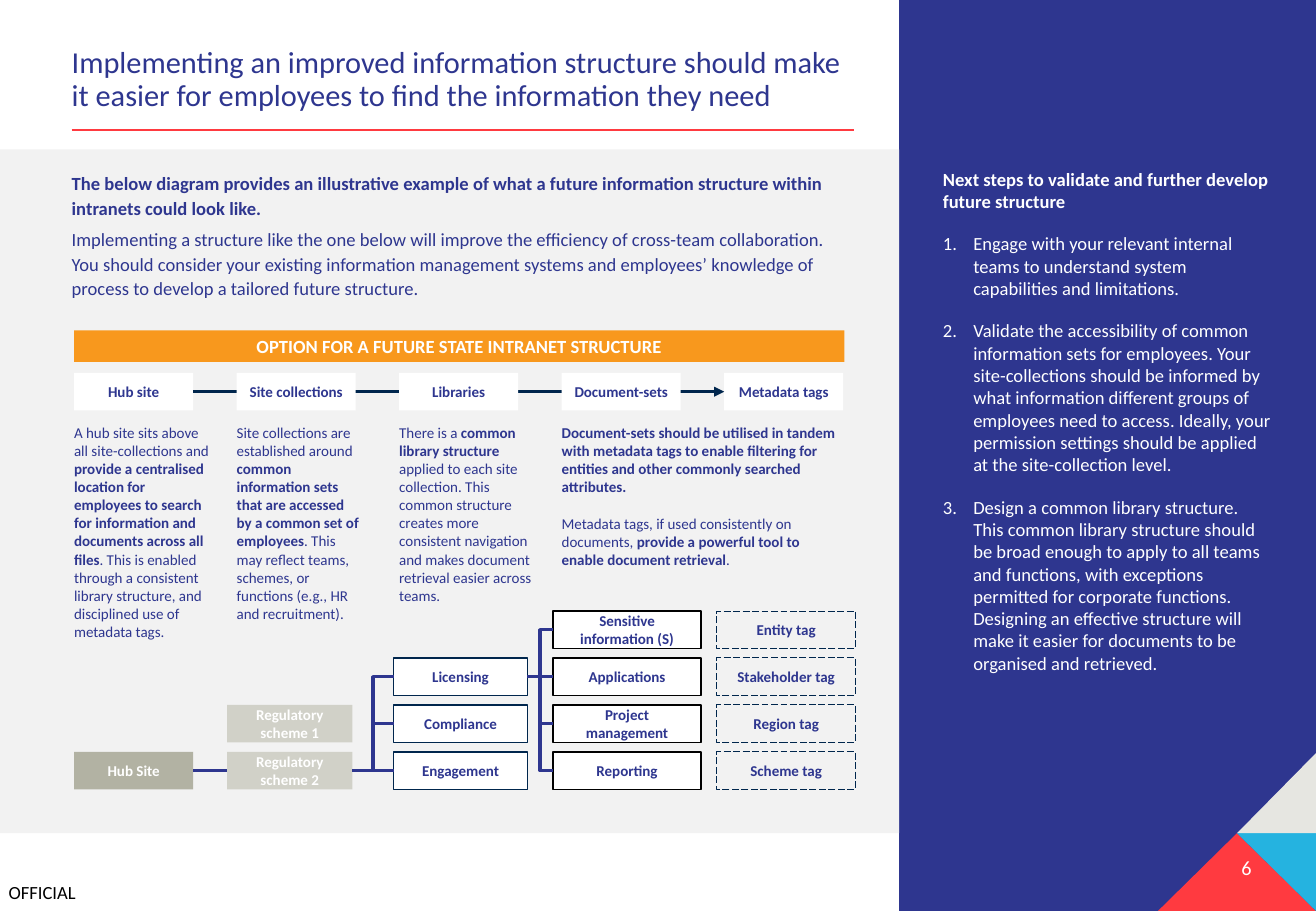
from dataclasses import dataclass
from typing import Any, NamedTuple, Optional

from lxml.etree import SubElement
from pptx import Presentation
from pptx.dml.color import RGBColor
from pptx.enum.dml import MSO_LINE
from pptx.enum.shapes import MSO_CONNECTOR, MSO_SHAPE
from pptx.enum.text import MSO_ANCHOR, MSO_AUTO_SIZE, PP_ALIGN
from pptx.oxml.ns import qn
from pptx.util import Inches, Pt


@dataclass(frozen=True)
class Theme:
    font: str = "Calibri"
    indigo: str = "2E368F"
    navy: str = "00264D"
    red: str = "FF3A40"
    cyan: str = "25B3E0"
    orange: str = "F8981D"
    stone: str = "E6E6E1"
    light_stone: str = "D1D1C8"
    dark_stone: str = "B2B2A3"
    panel: str = "F2F2F2"
    white: str = "FFFFFF"
    black: str = "000000"
    title_size: float = 18
    number_size: float = 12
    body_size: float = 11
    small_size: float = 8.9


class Run(NamedTuple):
    text: str
    bold: bool = False


class Area(NamedTuple):
    left: float
    top: float
    width: float
    height: float


@dataclass(frozen=True)
class BoxStyle:
    fill: str
    text: str
    line: Optional[str] = None
    line_width: float = 0.75
    dash: Optional[MSO_LINE] = None


@dataclass(frozen=True)
class TreeColumn:
    left: float
    width: float
    first_row: int
    labels: tuple[str, ...]
    style: BoxStyle


@dataclass(frozen=True)
class Description:
    column: int
    width: float
    height: float
    paragraphs: list[list[Run]]


THEME = Theme()
BOX_HEIGHT = 0.31
LEVEL_WIDTH = 0.98
LEVEL_TOP = 3.07
TREE_TOP = 5.03
TREE_SPAN = 1.16
SMALL_GAP = 10.7

LEVEL_STYLE = BoxStyle(THEME.white, THEME.indigo)
HUB_STYLE = BoxStyle(THEME.dark_stone, THEME.white)
SCHEME_STYLE = BoxStyle(THEME.light_stone, THEME.white)
LIBRARY_STYLE = BoxStyle(THEME.white, THEME.indigo, THEME.navy)
DOCUMENT_STYLE = BoxStyle(THEME.white, THEME.indigo, THEME.black)
TAG_STYLE = BoxStyle(THEME.panel, THEME.indigo, THEME.navy, 0.5, MSO_LINE.LONG_DASH)

LEVELS = ("Hub site", "Site collections", "Libraries", "Document-sets", "Metadata tags")
TREE = (
    TreeColumn(0.61, 0.98, 3, ("Hub Site",), HUB_STYLE),
    TreeColumn(1.87, 1.03, 2, ("Regulatory scheme 1", "Regulatory scheme 2"), SCHEME_STYLE),
    TreeColumn(3.24, 1.1, 1, ("Licensing", "Compliance", "Engagement"), LIBRARY_STYLE),
    TreeColumn(4.55, 1.22, 0, ("Sensitive information (S)", "Applications",
                               "Project management", "Reporting"), DOCUMENT_STYLE),
    TreeColumn(5.9, 1.14, 0, ("Entity tag", "Stakeholder tag", "Region tag", "Scheme tag"), TAG_STYLE),
)
BRANCHES = (
    ("Hub Site", ("Regulatory scheme 2",)),
    ("Regulatory scheme 2", TREE[2].labels),
    ("Licensing", TREE[3].labels),
)
DESCRIPTIONS = (
    Description(0, 1.23, 2.14, [[
        Run("A hub site sits above all site-collections and "),
        Run("provide a centralised location for employees to search for information "
            "and documents across all files", True),
        Run(". This is enabled through a consistent library structure, and disciplined use of metadata tags.")]]),
    Description(1, 1.11, 2.14, [[
        Run("Site collections are established around "),
        Run("common information sets that are accessed by a common set of employees", True),
        Run(". This may reflect teams, schemes, or functions (e.g., HR and recruitment).")]]),
    Description(2, 1.21, 1.56, [[
        Run("There is a "), Run("common library structure ", True),
        Run("applied to each site collection. This common structure creates more consistent "
            "navigation and makes document retrieval easier across teams.")]]),
    Description(3, 2.42, 0.95, [
        [Run("Document-sets should be utilised in tandem with metadata tags to enable filtering "
             "for entities and other commonly searched attributes.", True)],
        [Run("Metadata tags, if used consistently on documents, "),
         Run("provide a powerful tool to enable document retrieval", True), Run(".")]]),
)
NEXT_STEPS = (
    "Engage with your relevant internal teams to understand system capabilities and limitations.",
    "Validate the accessibility of common information sets for employees. Your site-collections should be "
    "informed by what information different groups of employees need to access. Ideally, your permission "
    "settings should be applied at the site-collection level.",
    "Design a common library structure. This common library structure should be broad enough to apply to all "
    "teams and functions, with exceptions permitted for corporate functions. Designing an effective structure "
    "will make it easier for documents to be organised and retrieved.",
)


def apply(target: Any, values: dict[str, Any]) -> None:
    for name, value in values.items():
        setattr(target, name, value)


def place(area: Area) -> list[int]:
    return [Inches(length) for length in area]


def write(frame: Any, paragraphs: list[list[Run]], size: float, color: str, gap: float = 0, **paragraph_format: Any) -> None:
    for index, runs in enumerate(paragraphs):
        paragraph = frame.add_paragraph() if index else frame.paragraphs[0]
        apply(paragraph, paragraph_format)
        if index and gap:
            paragraph.space_before = Pt(gap)
        for part in runs:
            run = paragraph.add_run()
            run.text = part.text
            apply(run.font, {"name": THEME.font, "size": Pt(size), "bold": part.bold})
            run.font.color.rgb = RGBColor.from_string(color)


def add_text(slide: Any, area: Area, paragraphs: list[list[Run]], size: float, color: str, right: float = 0,
             side: float = 0.05, wrap: bool = True, **text_format: Any) -> Any:
    frame = slide.shapes.add_textbox(*place(area)).text_frame
    apply(frame, {"word_wrap": wrap, "margin_left": 0, "margin_right": Inches(right),
                  "margin_top": Inches(side), "margin_bottom": Inches(side)})
    write(frame, paragraphs, size, color, **text_format)
    return frame


def finish(shape: Any, fill: str) -> None:
    shape.shadow.inherit = False
    shape.fill.solid()
    shape.fill.fore_color.rgb = RGBColor.from_string(fill)
    shape.line.fill.background()


def add_box(slide: Any, area: Area, style: BoxStyle, label: str = "", size: float = THEME.small_size) -> Any:
    box = slide.shapes.add_shape(MSO_SHAPE.RECTANGLE, *place(area))
    finish(box, style.fill)
    if style.line:
        box.line.color.rgb = RGBColor.from_string(style.line)
        apply(box.line, {"width": Pt(style.line_width), "dash_style": style.dash})
    if label:
        apply(box.text_frame, {"word_wrap": True, "vertical_anchor": MSO_ANCHOR.MIDDLE})
        write(box.text_frame, [[Run(label, True)]], size, style.text, alignment=PP_ALIGN.CENTER)
    return box


def add_triangle(slide: Any, points: list[tuple[float, float]], fill: str) -> None:
    start, *rest = [(Inches(x), Inches(y)) for x, y in points]
    builder = slide.shapes.build_freeform(*start)
    builder.add_line_segments(rest, close=True)
    finish(builder.convert_to_shape(), fill)


def add_line(slide: Any, color: str, width: float, ends: tuple[float, ...] = (0, 0, 0, 0), elbow: bool = False) -> Any:
    kind = MSO_CONNECTOR.ELBOW if elbow else MSO_CONNECTOR.STRAIGHT
    line = slide.shapes.add_connector(kind, *[Inches(end) for end in ends])
    line.line.color.rgb = RGBColor.from_string(color)
    line.line.width = Pt(width)
    SubElement(line._element.spPr, qn("a:effectLst"))
    return line


def join(slide: Any, source: Any, target: Any, color: str) -> Any:
    line = add_line(slide, color, 2, elbow=source.top != target.top)
    line.begin_connect(source, 3)
    line.end_connect(target, 1)
    return line


def add_background(slide: Any) -> None:
    add_box(slide, Area(7.4, 0, 3.43, 7.5), BoxStyle(THEME.indigo, THEME.white))
    add_triangle(slide, [(10.18, 6.86), (9.53, 7.5), (10.83, 7.5)], THEME.red)
    add_triangle(slide, [(10.83, 6.86), (10.18, 6.86), (10.83, 7.5)], THEME.cyan)
    add_triangle(slide, [(10.83, 6.2), (10.18, 6.86), (10.83, 6.86)], THEME.stone)
    add_line(slide, THEME.red, 1.25, (0.59, 1.07, 7.03, 1.07))
    add_box(slide, Area(0, 1.23, 7.4, 5.63), BoxStyle(THEME.panel, THEME.indigo))
    add_text(slide, Area(0.07, 7.25, 0.59, 0.18), [[Run("OFFICIAL")]], THEME.body_size, THEME.black, side=0, wrap=False)
    add_text(slide, Area(9.43, 6.99, 0.87, 0.3), [[Run("6")]], THEME.number_size, THEME.white, alignment=PP_ALIGN.RIGHT)


def add_title(slide: Any) -> None:
    title = slide.shapes.title
    apply(title, dict(zip(("left", "top", "width", "height"), place(Area(0.59, 0.33, 6.44, 0.65)))))
    apply(title.text_frame, {"margin_left": 0, "margin_right": 0, "margin_top": Inches(0.05), "word_wrap": True,
                             "margin_bottom": Inches(0.05), "vertical_anchor": MSO_ANCHOR.BOTTOM,
                             "auto_size": MSO_AUTO_SIZE.NONE})
    write(title.text_frame, [[Run("Implementing an improved information structure should make it easier for "
                                  "employees to find the information they need")]],
          THEME.title_size, THEME.indigo, alignment=PP_ALIGN.LEFT, line_spacing=0.9)


def add_introduction(slide: Any) -> None:
    add_text(slide, Area(0.59, 1.35, 6.44, 0.47), [[Run(
        "The below diagram provides an illustrative example of what a future information structure within "
        "intranets could look like.", True)]], THEME.body_size, THEME.indigo, line_spacing=1.1)
    add_text(slide, Area(0.59, 1.81, 6.44, 0.7), [[Run(
        "Implementing a structure like the one below will improve the efficiency of cross-team collaboration. "
        "You should consider your existing information management systems and employees’ knowledge of process "
        "to develop a tailored future structure.")]], THEME.body_size, THEME.indigo, line_spacing=1.1)


def add_next_steps(slide: Any) -> None:
    heading = Run("Next steps to validate and further develop future structure", True)
    frame = add_text(slide, Area(7.76, 1.33, 2.7, 2.95), [[heading], *[[Run(step)] for step in NEXT_STEPS]],
                     THEME.body_size, THEME.white, gap=12)
    for paragraph in frame.paragraphs[1:]:
        properties = paragraph._p.get_or_add_pPr()
        properties.set("marL", str(Inches(0.25)))
        properties.set("indent", str(-Inches(0.25)))
        SubElement(properties, qn("a:buFont"), typeface="+mj-lt")
        SubElement(properties, qn("a:buAutoNum"), type="arabicPeriod")


def level_left(column: int) -> float:
    return 0.61 + 5.35 * column / 4


def add_levels(slide: Any) -> None:
    add_box(slide, Area(0.61, 2.72, 6.34, 0.26), BoxStyle(THEME.orange, THEME.white),
            "OPTION FOR A FUTURE STATE INTRANET STRUCTURE", THEME.body_size)

    def add_level(column: int) -> Any:
        return add_box(slide, Area(level_left(column), LEVEL_TOP, LEVEL_WIDTH, BOX_HEIGHT), LEVEL_STYLE, LEVELS[column])

    # The arrow runs behind the levels between its two ends
    arrow = join(slide, add_level(0), add_level(4), THEME.navy)
    SubElement(arrow.line._get_or_add_ln(), qn("a:tailEnd"), type="triangle")
    for column in (1, 2, 3):
        add_level(column)
    for item in DESCRIPTIONS:
        add_text(slide, Area(level_left(item.column), 3.44, item.width, item.height), item.paragraphs,
                 THEME.small_size, THEME.indigo, right=0.1, gap=SMALL_GAP)


def add_tree(slide: Any) -> None:
    boxes: dict[str, Any] = {}
    for column in TREE:
        for row, label in enumerate(column.labels, column.first_row):
            area = Area(column.left, TREE_TOP + TREE_SPAN * row / 3, column.width, BOX_HEIGHT)
            boxes[label] = add_box(slide, area, column.style, label)
    for parent, children in BRANCHES:
        for child in children:
            join(slide, boxes[parent], boxes[child], THEME.indigo)


def main() -> None:
    presentation = Presentation()
    apply(presentation, {"slide_width": Inches(10.83), "slide_height": Inches(7.5)})
    slide = presentation.slides.add_slide(presentation.slide_layouts[5])
    for add_part in (add_background, add_title, add_introduction, add_next_steps, add_levels, add_tree):
        add_part(slide)
    presentation.save("out.pptx")


if __name__ == "__main__":
    main()
